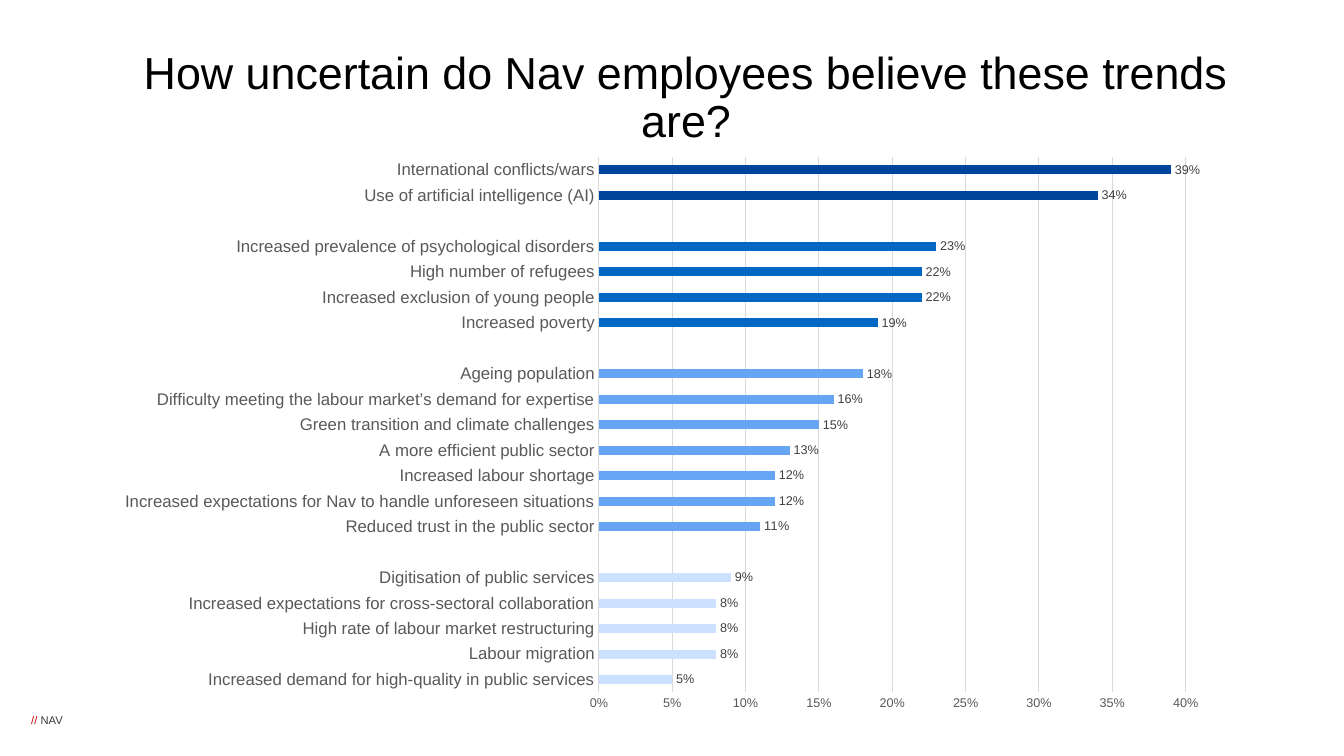
from dataclasses import dataclass

from lxml.etree import SubElement
from pptx import Presentation
from pptx.chart.data import CategoryChartData
from pptx.dml.color import RGBColor
from pptx.enum.chart import XL_CHART_TYPE, XL_LABEL_POSITION, XL_TICK_MARK
from pptx.enum.text import MSO_ANCHOR, PP_ALIGN
from pptx.oxml.ns import qn
from pptx.util import Inches, Pt


@dataclass(frozen=True)
class Theme:
    font: str = "Arial"
    black: str = "000000"
    red: str = "C30000"
    footer_grey: str = "3E3832"
    axis_grey: str = "595959"
    label_grey: str = "404040"
    grid_grey: str = "D9D9D9"
    title_size: int = 32
    category_size: int = 12
    chart_size: int = 10
    value_size: int = 9
    footer_size: int = 8


THEME = Theme()

# Bar colour and trends of each group, from the bottom of the chart upwards.
TREND_GROUPS = [
    ("CCE1FF", [
        ("Increased demand for high-quality in public services", 0.05),
        ("Labour migration", 0.08),
        ("High rate of labour market restructuring", 0.08),
        ("Increased expectations for cross-sectoral collaboration", 0.08),
        ("Digitisation of public services", 0.09),
    ]),
    ("66A5F4", [
        ("Reduced trust in the public sector", 0.11),
        ("Increased expectations for Nav to handle unforeseen situations", 0.12),
        ("Increased labour shortage", 0.12),
        ("A more efficient public sector", 0.13),
        ("Green transition and climate challenges", 0.15),
        ("Difficulty meeting the labour market’s demand for expertise", 0.16),
        ("Ageing population", 0.18),
    ]),
    ("0067C5", [
        ("Increased poverty", 0.19),
        ("Increased exclusion of young people", 0.22),
        ("High number of refugees", 0.22),
        ("Increased prevalence of psychological disorders", 0.23),
    ]),
    ("00459C", [
        ("Use of artificial intelligence (AI)", 0.34),
        ("International conflicts/wars", 0.39),
    ]),
]


def style_font(font, size, color):
    font.name = THEME.font
    font.size = Pt(size)
    font.bold = False
    font.color.rgb = RGBColor.from_string(color)


def add_text(slide, area, runs, *, size, align=PP_ALIGN.LEFT, anchor=MSO_ANCHOR.TOP,
             line_spacing=1.0, inset=None, wrap=True):
    """Add one paragraph made of (text, color) runs."""
    box = slide.shapes.add_textbox(*map(Inches, area))
    frame = box.text_frame
    frame.word_wrap = wrap
    frame.vertical_anchor = anchor
    if inset is not None:
        frame.margin_left = frame.margin_right = Inches(inset)
        frame.margin_top = frame.margin_bottom = Inches(inset)
    para = frame.paragraphs[0]
    para.alignment = align
    para.line_spacing = line_spacing
    for text, color in runs:
        span = para.add_run()
        span.text = text
        style_font(span.font, size, color)
    return box


def set_plot_area(chart, chart_area, plot_area):
    """Fix the inner plot area, both areas given in inches on the slide."""
    left, top, width, height = chart_area
    plot_left, plot_top, plot_width, plot_height = plot_area
    plot = chart.element.find(f".//{qn('c:plotArea')}")
    layout = plot.find(qn("c:layout"))
    if layout is None:
        layout = SubElement(plot, qn("c:layout"))
        plot.insert(0, layout)
    manual = SubElement(layout, qn("c:manualLayout"))
    settings = {
        "layoutTarget": "inner", "xMode": "edge", "yMode": "edge",
        "x": (plot_left - left) / width, "y": (plot_top - top) / height,
        "w": plot_width / width, "h": plot_height / height,
    }
    for name, value in settings.items():
        SubElement(manual, qn(f"c:{name}")).set("val", str(value))


def style_line(line, color):
    line.color.rgb = RGBColor.from_string(color)
    line.width = Pt(0.75)


def style_axes(chart):
    categories, values = chart.category_axis, chart.value_axis
    for axis, size in ((categories, THEME.category_size), (values, THEME.value_size)):
        axis.major_tick_mark = axis.minor_tick_mark = XL_TICK_MARK.NONE
        style_font(axis.tick_labels.font, size, THEME.axis_grey)
    categories.has_major_gridlines = False
    style_line(categories.format.line, THEME.grid_grey)
    values.minimum_scale, values.maximum_scale, values.major_unit = 0, 0.4, 0.05
    values.has_major_gridlines = True
    style_line(values.major_gridlines.format.line, THEME.grid_grey)
    values.format.line.fill.background()
    values.tick_labels.number_format = "0%"
    values.tick_labels.number_format_is_linked = False


def style_labels(plot):
    plot.has_data_labels = True
    labels = plot.data_labels
    labels.show_value = True
    labels.position = XL_LABEL_POSITION.OUTSIDE_END
    labels.number_format = "0%"
    labels.number_format_is_linked = False
    style_font(labels.font, THEME.value_size, THEME.label_grey)


def add_trend_chart(slide, area, plot_area):
    """Add the bars, with one empty category between two groups."""
    bars = []
    for color, trends in TREND_GROUPS:
        if bars:
            bars.append(("", None, None))
        bars.extend((name, share, color) for name, share in trends)
    data = CategoryChartData(number_format="0%")
    data.categories = [name for name, _, _ in bars]
    data.add_series("Series 1", [share for _, share, _ in bars])

    chart = slide.shapes.add_chart(
        XL_CHART_TYPE.BAR_CLUSTERED, *map(Inches, area), data).chart
    chart.has_title = chart.has_legend = False
    style_font(chart.font, THEME.chart_size, THEME.black)
    plot = chart.plots[0]
    plot.gap_width = 182
    plot.vary_by_categories = False
    series = plot.series[0]
    series.format.fill.solid()
    series.format.fill.fore_color.rgb = RGBColor.from_string(THEME.red)
    for index, (_, _, color) in enumerate(bars):
        if color:
            fill = series.points[index].format.fill
            fill.solid()
            fill.fore_color.rgb = RGBColor.from_string(color)
    style_labels(plot)
    style_axes(chart)
    set_plot_area(chart, area, plot_area)


def main():
    deck = Presentation()
    deck.slide_width, deck.slide_height = Inches(13.33), Inches(7.5)
    slide = deck.slides.add_slide(deck.slide_layouts[6])
    add_text(slide, (0.31, 7.08, 0.35, 0.13),
             [("// ", THEME.red), ("NAV", THEME.footer_grey)],
             size=THEME.footer_size, inset=0, wrap=False)
    add_text(slide, (0.92, 0.4, 11.77, 1.17),
             [("How uncertain do Nav employees believe these trends are?", THEME.black)],
             size=THEME.title_size, align=PP_ALIGN.CENTER,
             anchor=MSO_ANCHOR.MIDDLE, line_spacing=0.9)
    add_trend_chart(slide, (1.02, 1.44, 11.09, 5.74), (5.94, 1.56, 5.82, 5.31))
    deck.save("out.pptx")


if __name__ == "__main__":
    main()
